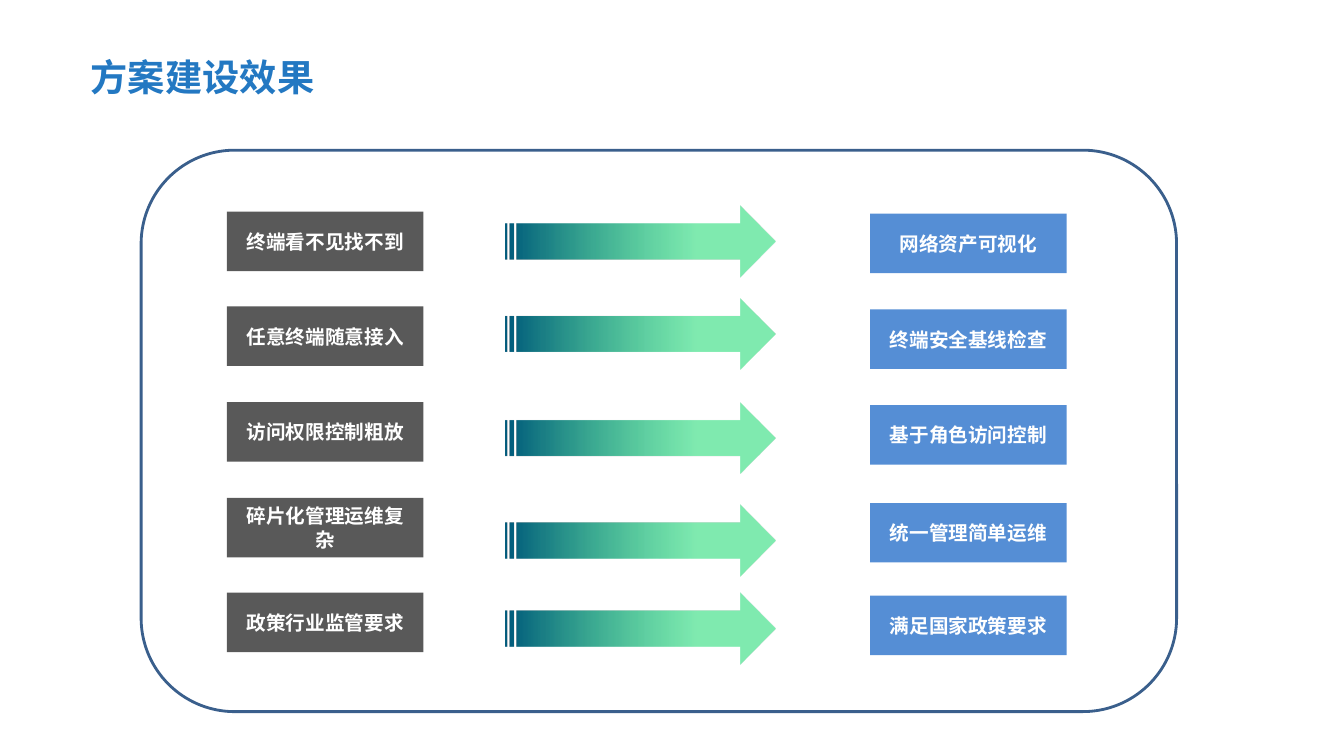
import pptx
import pptx.util
import pptx.dml.color
import pptx.enum.shapes
import pptx.enum.text
import pptx.oxml.ns
import lxml.etree
import dataclasses

SHAPE = pptx.enum.shapes.MSO_SHAPE
ANCHOR = pptx.enum.text.MSO_ANCHOR
ALIGN = pptx.enum.text.PP_ALIGN


@dataclasses.dataclass(frozen=True)
class Theme:
    title: str = "2378C2"
    issue: str = "595959"
    gain: str = "558ED5"
    frame: str = "3A5F8C"
    tail: str = "035C7D"
    head: str = "15DA6F"
    text: str = "FFFFFF"
    han: str = "Noto Sans CJK SC"
    latin: str = "Calibri"
    big: float = 26.6
    small: float = 14
    rule: float = 2


THEME = Theme()

ISSUES = ["终端看不见找不到", "任意终端随意接入", "访问权限控制粗放",
          "碎片化管理运维复杂", "政策行业监管要求"]
GAINS = ["网络资产可视化", "终端安全基线检查", "基于角色访问控制",
         "统一管理简单运维", "满足国家政策要求"]


def px(count):
    return pptx.util.Emu(count * 9144)


def rgb(code):
    return pptx.dml.color.RGBColor.from_string(code)


def add_tag(parent, name, **values):
    return lxml.etree.SubElement(parent, pptx.oxml.ns.qn(name), values)


def style_text(shape, text, font, size, color, align):
    frame = shape.text_frame
    frame.text = text
    frame.word_wrap = True
    frame.vertical_anchor = ANCHOR.MIDDLE
    line = frame.paragraphs[0]
    line.alignment = align
    for run in line.runs:
        run.font.name = font
        run.font.size = pptx.util.Pt(size)
        run.font.bold = True
        run.font.color.rgb = rgb(color)
        add_tag(run.font._element, "a:ea", typeface=THEME.han)


def add_plain(slide, kind, box):
    shape = slide.shapes.add_shape(kind, *map(px, box))
    shape.shadow.inherit = False
    shape.line.fill.background()
    return shape


def add_title(slide, box, text):
    title = slide.shapes.title
    title.left, title.top, title.width, title.height = map(px, box)
    style_text(title, text, THEME.han, THEME.big, THEME.title, ALIGN.LEFT)
    frame = title.text_frame
    frame.margin_left = frame.margin_right = 0
    frame.margin_top = frame.margin_bottom = 0
    frame.auto_size = pptx.enum.text.MSO_AUTO_SIZE.NONE


def add_frame(slide, box):
    frame = add_plain(slide, SHAPE.ROUNDED_RECTANGLE, box)
    frame.fill.background()
    frame.line.color.rgb = rgb(THEME.frame)
    frame.line.width = pptx.util.Pt(THEME.rule)


def add_labels(slide, box, tops, texts, color):
    left, top, width, height = box
    for drop, text in zip(tops, texts):
        label = add_plain(slide, SHAPE.RECTANGLE,
                          (left, top + drop, width, height))
        label.fill.solid()
        label.fill.fore_color.rgb = rgb(color)
        style_text(label, text, THEME.latin, THEME.small, THEME.text,
                   ALIGN.CENTER)


def add_arrows(slide, box, tops):
    left, top, width, height = box
    for drop in tops:
        arrow = add_plain(slide, SHAPE.STRIPED_RIGHT_ARROW,
                          (left, top + drop, width, height))
        arrow.fill.gradient()
        arrow.fill.gradient_angle = 0
        tail, head = arrow.fill.gradient_stops
        tail.position, head.position = 0.01, 0.71
        tail.color.rgb, head.color.rgb = rgb(THEME.tail), rgb(THEME.head)
        tint = arrow._element.spPr.findall(".//" + pptx.oxml.ns.qn("a:srgbClr"))
        add_tag(tint[1], "a:alpha", val="54000")


def add_panel(slide, box):
    left, top, width, height = box
    evens = [round(94.5 * row) for row in range(len(ISSUES))]
    add_labels(slide, (left + 85, top + 61, 195, 59), evens, ISSUES,
               THEME.issue)
    add_labels(slide, (left + 723, top + 63, 195, 59),
               [0, 95, 190, 287, 379], GAINS, THEME.gain)
    add_frame(slide, box)
    add_arrows(slide, (left + 361, top + 55, 268, 71),
               [0, 92, 195, 297, 384])


def main():
    deck = pptx.Presentation()
    deck.slide_width, deck.slide_height = px(1333), px(750)
    slide = deck.slides.add_slide(deck.slide_layouts[5])
    add_title(slide, (90, 54, 787, 45), "方案建设效果")
    add_panel(slide, (140, 149, 1027, 557))
    deck.save("out.pptx")


if __name__ == "__main__":
    main()
